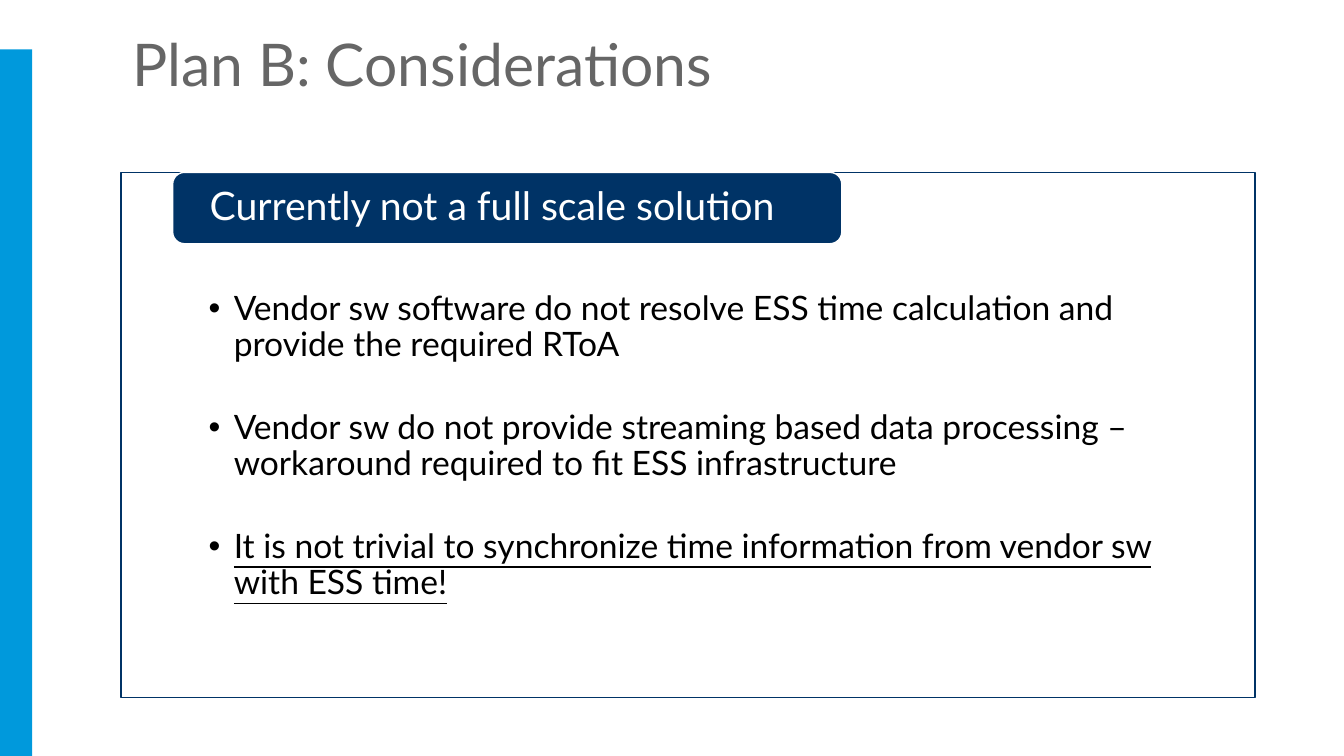
from lxml import etree
from pptx import Presentation
from pptx.dml.color import RGBColor
from pptx.enum.shapes import MSO_SHAPE
from pptx.enum.text import MSO_ANCHOR, MSO_AUTO_SIZE, PP_ALIGN
from pptx.oxml.ns import qn
from pptx.util import Pt

RECT = MSO_SHAPE.RECTANGLE
ROUND = MSO_SHAPE.ROUNDED_RECTANGLE
TOP = MSO_ANCHOR.TOP
MIDDLE = MSO_ANCHOR.MIDDLE
LEFT = PP_ALIGN.LEFT
FIXED = MSO_AUTO_SIZE.NONE

BLUE = RGBColor(0x00, 0x99, 0xDC)
NAVY = RGBColor(0x00, 0x33, 0x66)
GRAY = RGBColor(0x66, 0x66, 0x66)
BLACK = RGBColor(0x00, 0x00, 0x00)
WHITE = RGBColor(0xFF, 0xFF, 0xFF)

FACE = "Lato"
POINTS = [
    ("Vendor sw software do not resolve ESS time calculation and "
     "provide the required RToA", False),
    ("Vendor sw do not provide streaming based data processing – "
     "workaround required to fit ESS infrastructure", False),
    ("It is not trivial to synchronize time information from vendor sw "
     "with ESS time!", True),
]


def add_block(slide, kind, box, fill, line=None):
    block = slide.shapes.add_shape(kind, *map(Pt, box))
    block.shadow.inherit = False
    block.fill.solid()
    block.fill.fore_color.rgb = fill
    if line is None:
        block.line.fill.background()
    else:
        block.line.color.rgb = line
        block.line.width = Pt(1)
    return block


def set_frame(frame, pads, anchor):
    frame.word_wrap = True
    frame.auto_size = FIXED
    frame.vertical_anchor = anchor
    left, top, right, bottom = map(Pt, pads)
    frame.margin_left, frame.margin_top = left, top
    frame.margin_right, frame.margin_bottom = right, bottom


def add_text(para, text, size, color, under=None):
    para.alignment = LEFT
    para.line_spacing = 0.9
    run = para.add_run()
    run.text = text
    run.font.name = FACE
    run.font.size = Pt(size)
    run.font.color.rgb = color
    run.font.underline = under


def add_bullet(para):
    props = para._p.get_or_add_pPr()
    props.set("marL", str(Pt(18)))
    props.set("indent", str(Pt(-18)))
    etree.SubElement(props, qn("a:buFont")).set("typeface", "Arial")
    etree.SubElement(props, qn("a:buChar")).set("char", "•")


def add_title(slide, box, text):
    title = slide.shapes.title
    title.left, title.top, title.width, title.height = map(Pt, box)
    set_frame(title.text_frame, (7.2, 3.6, 7.2, 1.44), MIDDLE)
    add_text(title.text_frame.paragraphs[0], text, 42, GRAY)


def add_panel(slide, box, head, points):
    left, top, width, height = box
    panel = add_block(slide, RECT, box, WHITE, NAVY)
    frame = panel.text_frame
    set_frame(frame, (62.6, 85, 62.6, 13.7), TOP)
    for index, (text, under) in enumerate(points):
        para = frame.paragraphs[0] if index == 0 else frame.add_paragraph()
        if index:
            para.space_before = Pt(33.3)
        add_bullet(para)
        add_text(para, text, 24, BLACK, under or None)

    label = add_block(slide, ROUND, (left + 36.9, top, 478, 51), NAVY, WHITE)
    set_frame(label.text_frame, (24, 0, 24, 0), MIDDLE)
    add_text(label.text_frame.paragraphs[0], head, 28, WHITE)


def main():
    deck = Presentation()
    deck.slide_width, deck.slide_height = Pt(960), Pt(540)
    slide = deck.slides.add_slide(deck.slide_layouts[5])
    add_block(slide, RECT, (0, 35.3, 23, 504.7), BLUE)
    add_title(slide, (87.1, 20.9, 737.3, 51.8), "Plan B: Considerations")
    add_panel(slide, (86.4, 123.1, 810, 375.1),
              "Currently not a full scale solution", POINTS)
    deck.save("out.pptx")


if __name__ == "__main__":
    main()
